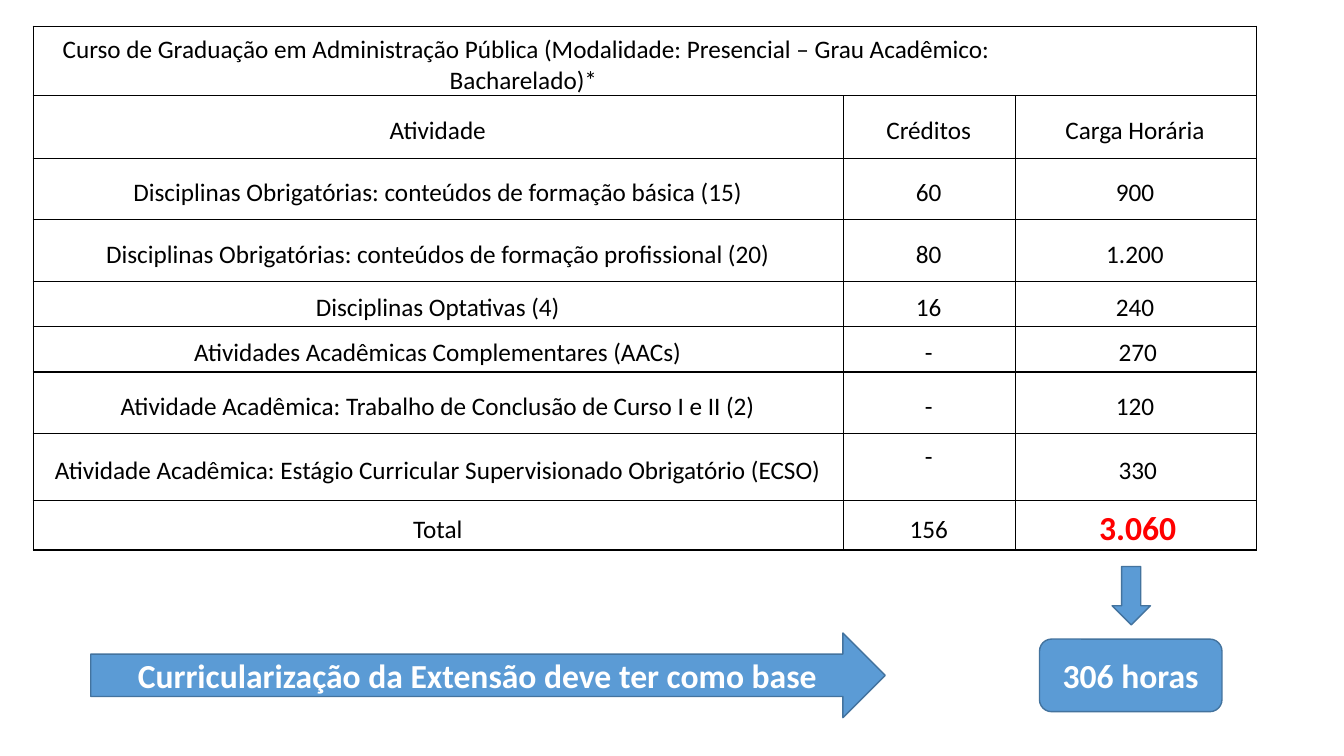
"""Build the course workload slide with its table and extension-hours callouts."""
import pptx
import pptx.util
import pptx.dml.color
import pptx.enum.shapes
import pptx.enum.text
import pptx.oxml
from pptx.oxml import ns

Inches = pptx.util.Inches
Pt = pptx.util.Pt
RGBColor = pptx.dml.color.RGBColor
MSO_SHAPE = pptx.enum.shapes.MSO_SHAPE
MSO_ANCHOR = pptx.enum.text.MSO_ANCHOR
PP_ALIGN = pptx.enum.text.PP_ALIGN

BLACK = RGBColor(0x00, 0x00, 0x00)
WHITE = RGBColor(0xFF, 0xFF, 0xFF)
RED = RGBColor(0xFF, 0x00, 0x00)
BLUE = RGBColor(0x5B, 0x9B, 0xD5)
DARK_BLUE = RGBColor(0x43, 0x73, 0x9E)

COURSE = ("Curso de Graduação em Administração Pública "
          "(Modalidade: Presencial – Grau Acadêmico: Bacharelado)* ")
ROWS = [
    (0.61, COURSE, "", ""),
    (0.62, "Atividade ", "Créditos ", "Carga Horária "),
    (0.61, "Disciplinas Obrigatórias: conteúdos de formação básica (15) ", "60 ", "900 "),
    (0.61, "Disciplinas Obrigatórias: conteúdos de formação profissional (20) ", "80 ", "1.200 "),
    (0.45, "Disciplinas Optativas (4) ", "16 ", "240 "),
    (0.45, "Atividades Acadêmicas Complementares (AACs) ", "- ", "270"),
    (0.61, "Atividade Acadêmica: Trabalho de Conclusão de Curso I e II (2) ", "- ", "120 "),
    (0.67, "Atividade Acadêmica: Estágio Curricular Supervisionado Obrigatório (ECSO) ", "- ", "330"),
    (0.45, "Total ", "156 ", "3.060"),
]
COLUMN_WIDTHS = (8.04, 1.7, 2.39)


class SlideBuilder:
    def __init__(self, slide, font="Calibri"):
        self.slide = slide
        self.font = font

    def style(self, p, size, color, bold=False):
        p.alignment = PP_ALIGN.CENTER
        p.font.name = self.font
        p.font.size = Pt(size)
        p.font.bold = bold
        p.font.color.rgb = color

    def borders(self, cell, sides):
        tcPr = cell._tc.get_or_add_tcPr()
        for side in "LRTB":
            fill = (f'<a:solidFill><a:srgbClr val="{BLACK}"/></a:solidFill>'
                    if side in sides else "<a:noFill/>")
            tcPr.append(pptx.oxml.parse_xml(
                f'<a:ln{side} {ns.nsdecls("a")} w="{Pt(1)}">{fill}</a:ln{side}>'))

    def cell(self, cell, text, sides="LRTB", anchor=MSO_ANCHOR.MIDDLE):
        self.borders(cell, sides)
        cell.fill.background()
        cell.margin_left, cell.margin_top = Inches(0.07), Inches(0.08)
        cell.margin_right, cell.margin_bottom = Inches(0.03), 0
        cell.vertical_anchor = anchor
        cell.text = text
        self.style(cell.text_frame.paragraphs[0], 18, BLACK)

    def table(self, left, top, widths, rows):
        height = sum(row[0] for row in rows)
        table = self.slide.shapes.add_table(
            len(rows), len(widths), Inches(left), Inches(top),
            Inches(sum(widths)), Inches(height)).table
        table.first_row = table.horz_banding = False
        for column, width in zip(table.columns, widths):
            column.width = Inches(width)
        for i, (row_height, *texts) in enumerate(rows):
            table.rows[i].height = Inches(row_height)
            for j, text in enumerate(texts):
                sides = ("LTB", "TB", "RTB")[j] if i == 0 else "LRTB"
                self.cell(table.cell(i, j), text, sides)
        return table

    def shape(self, kind, left, top, width, height, text=""):
        sp = self.slide.shapes.add_shape(
            kind, Inches(left), Inches(top), Inches(width), Inches(height))
        sp.shadow.inherit = False
        sp.fill.solid()
        sp.fill.fore_color.rgb = BLUE
        sp.line.color.rgb = DARK_BLUE
        sp.line.width = Pt(1)
        if text:
            tf = sp.text_frame
            tf.word_wrap = True
            tf.vertical_anchor = MSO_ANCHOR.MIDDLE
            tf.text = text
            self.style(tf.paragraphs[0], 24, WHITE, bold=True)


def main():
    prs = pptx.Presentation()
    prs.slide_width, prs.slide_height = Inches(13.33), Inches(7.5)
    s = SlideBuilder(prs.slides.add_slide(prs.slide_layouts[6]))

    workload = s.table(0.33, 0.26, COLUMN_WIDTHS, ROWS)
    workload.cell(0, 0).merge(workload.cell(0, 1))
    workload.cell(0, 0).vertical_anchor = MSO_ANCHOR.BOTTOM
    workload.cell(7, 1).vertical_anchor = MSO_ANCHOR.TOP
    s.style(workload.cell(8, 2).text_frame.paragraphs[0], 24, RED, bold=True)

    s.shape(MSO_SHAPE.RIGHT_ARROW, 0.9, 6.28, 7.88, 0.84,
            "Curricularização da Extensão deve ter como base")
    s.shape(MSO_SHAPE.ROUNDED_RECTANGLE, 10.31, 6.34, 1.81, 0.72, "306 horas")
    s.shape(MSO_SHAPE.DOWN_ARROW, 11.03, 5.62, 0.38, 0.58)
    prs.save("out.pptx")


if __name__ == "__main__":
    main()
